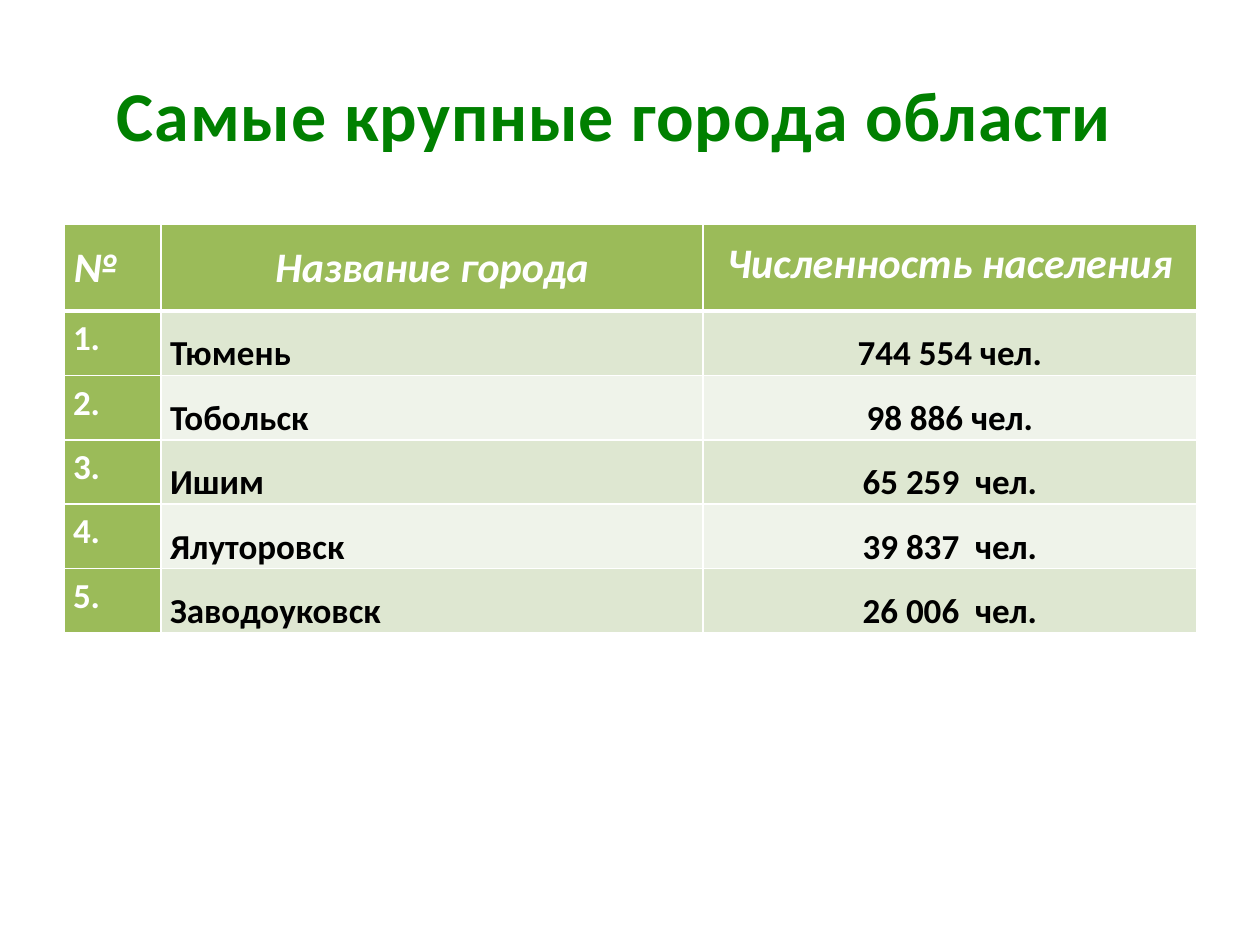
import pptx
import pptx.dml.color
import pptx.enum.text
import pptx.oxml.ns
import pptx.util
from lxml import etree

Inches = pptx.util.Inches
Pt = pptx.util.Pt
ALIGN = pptx.enum.text.PP_ALIGN
ANCHOR = pptx.enum.text.MSO_ANCHOR

GREEN, WHITE, BLACK, TITLE_GREEN = "9BBB59", "FFFFFF", "000000", "008000"
BANDS = ("DEE7D1", "EFF3EA")
COLUMN_WIDTHS = (0.77, 4.3, 3.92)
HEADER_HEIGHT, ROW_HEIGHT = 0.69, 0.48

HEADERS = ("№", "Название города", "Численность населения")
CITIES = (
    ("Тюмень", "744 554 чел."),
    ("Тобольск", "98 886 чел."),
    ("Ишим", "65 259  чел."),
    ("Ялуторовск", "39 837  чел."),
    ("Заводоуковск", "26 006  чел."),
)


def rgb(color):
    return pptx.dml.color.RGBColor.from_string(color)


def set_attributes(target, values):
    for attribute, value in values.items():
        setattr(target, attribute, value)


def write_text(paragraph, text, size, color, italic=False):
    run = paragraph.add_run()
    run.text = text
    set_attributes(run.font, {"name": "Calibri", "size": Pt(size),
                              "bold": True, "italic": italic})
    run.font.color.rgb = rgb(color)
    return run


def add_title(slide, text):
    box = slide.shapes.add_textbox(Inches(0.83), Inches(0.52), Inches(8.59), Inches(1.75))
    set_attributes(box.text_frame, {"word_wrap": True, "vertical_anchor": ANCHOR.TOP})
    run = write_text(box.text_frame.paragraphs[0], text, 40, TITLE_GREEN)
    run.font._element.set("spc", "50")


def set_borders(cell, top=1, bottom=1):
    """Draw white borders; must come before the cell's fill."""
    properties = cell._tc.get_or_add_tcPr()
    for side, width in (("L", 1), ("R", 1), ("T", top), ("B", bottom)):
        line = etree.SubElement(properties, pptx.oxml.ns.qn(f"a:ln{side}"), w=str(Pt(width)))
        fill = etree.SubElement(line, pptx.oxml.ns.qn("a:solidFill"))
        etree.SubElement(fill, pptx.oxml.ns.qn("a:srgbClr"), val=WHITE)


def format_cell(cell, text, fill, align, spacing, size, color, anchor=ANCHOR.TOP, italic=False):
    cell.fill.solid()
    cell.fill.fore_color.rgb = rgb(fill)
    set_attributes(cell, {"margin_left": Inches(0.07), "margin_right": Inches(0.07),
                          "margin_top": 0, "margin_bottom": 0, "vertical_anchor": anchor})
    paragraph = cell.text_frame.paragraphs[0]
    set_attributes(paragraph, {"alignment": align, "line_spacing": spacing})
    write_text(paragraph, text, size, color, italic)


def add_city_table(slide):
    table = slide.shapes.add_table(
        len(CITIES) + 1, len(HEADERS), Inches(0.51), Inches(1.78),
        Inches(sum(COLUMN_WIDTHS)), Inches(HEADER_HEIGHT + ROW_HEIGHT * len(CITIES))).table
    for column, width in zip(table.columns, COLUMN_WIDTHS):
        column.width = Inches(width)
    for index, row in enumerate(table.rows):
        row.height = Inches(ROW_HEIGHT if index else HEADER_HEIGHT)

    header_formats = ((ALIGN.JUSTIFY, None), (ALIGN.CENTER, None), (ALIGN.CENTER, Pt(25)))
    for column, (text, (align, spacing)) in enumerate(zip(HEADERS, header_formats)):
        cell = table.cell(0, column)
        set_borders(cell, bottom=3)
        format_cell(cell, text, GREEN, align, spacing, 24, WHITE, ANCHOR.MIDDLE, True)

    for number, (city, population) in enumerate(CITIES, start=1):
        band = BANDS[(number - 1) % 2]
        entries = (
            (f"{number}.", GREEN, ALIGN.JUSTIFY, 1.15, 20, WHITE),
            (city, band, ALIGN.JUSTIFY, 1.5, 20, BLACK),
            (population, band, ALIGN.CENTER, 1.5, 20, BLACK),
        )
        for column, entry in enumerate(entries):
            cell = table.cell(number, column)
            set_borders(cell, top=3 if number == 1 else 1)
            format_cell(cell, *entry)


def main():
    deck = pptx.Presentation()
    set_attributes(deck, {"slide_width": Inches(10), "slide_height": Inches(7.5)})
    slide = deck.slides.add_slide(deck.slide_layouts[6])
    add_city_table(slide)
    add_title(slide, "Самые крупные города области")
    deck.save("out.pptx")


if __name__ == "__main__":
    main()
